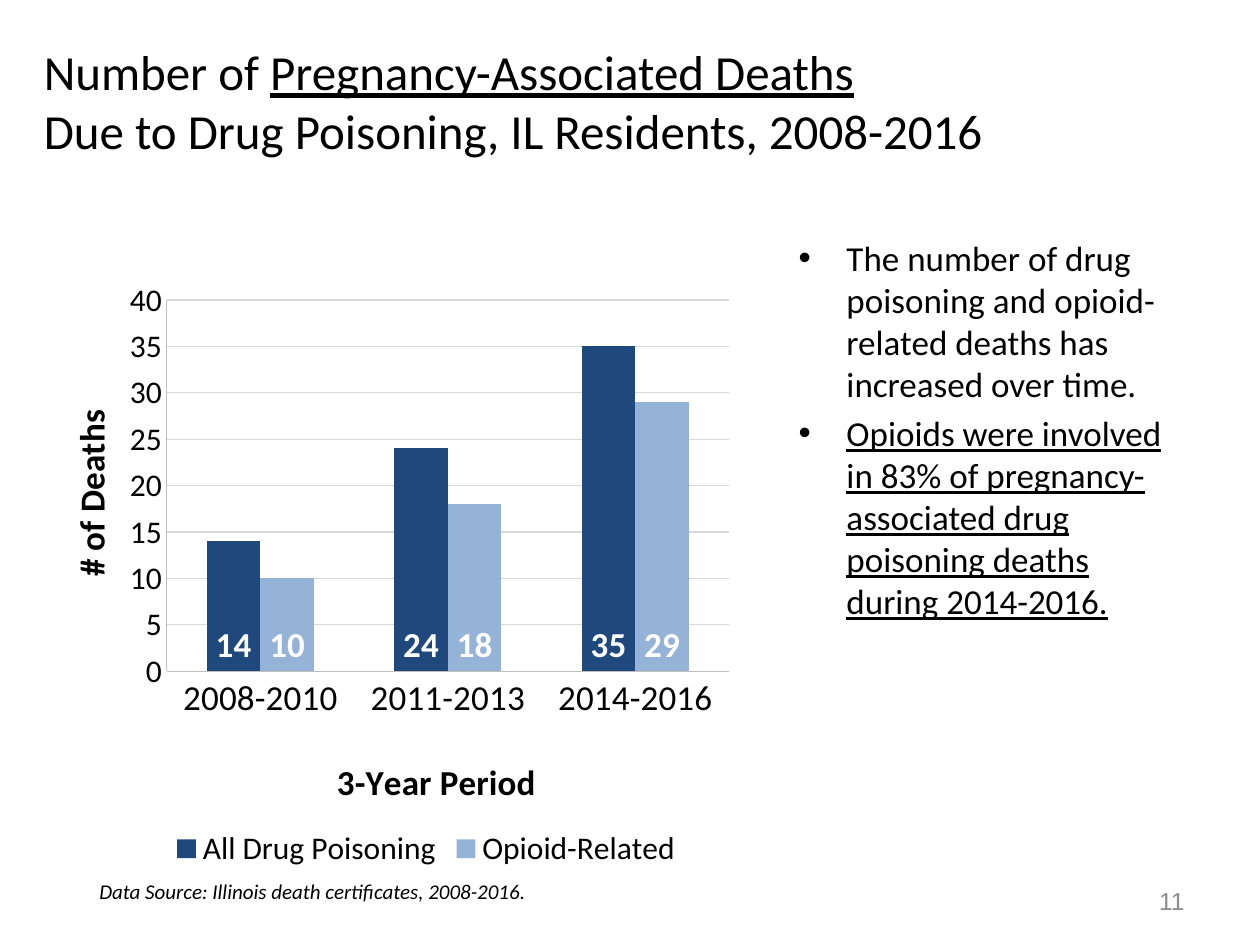
from lxml.etree import SubElement
from pptx import Presentation
from pptx.chart.data import CategoryChartData
from pptx.dml.color import RGBColor
from pptx.enum.chart import XL_CHART_TYPE, XL_LABEL_POSITION, XL_LEGEND_POSITION, XL_TICK_MARK
from pptx.enum.text import MSO_ANCHOR, PP_ALIGN
from pptx.oxml import parse_xml
from pptx.oxml.ns import nsdecls, qn
from pptx.util import Inches, Pt

THEME = dict(
    font="Calibri", number_font="Arial",
    text="000000", muted="8C8C8C", light="FFFFFF",
    axis="BFBFBF", grid="D9D9D9", series=("1F497D", "95B3D7"),
    title=28, body=20, tick=18, number=14, source=12, hairline=0.75,
)

prs = Presentation()
prs.slide_width, prs.slide_height = Inches(10), Inches(7.5)
COL, ROW = prs.slide_width / 40, prs.slide_height / 30
s = prs.slides.add_slide(prs.slide_layouts[6])


def add_text(cell, paras, size, font=THEME["font"], color=THEME["text"], italic=False,
             align=PP_ALIGN.LEFT, anchor=MSO_ANCHOR.TOP, bullet=False):
    """Fill a grid cell (col, row, cols, rows); each paragraph is a list of (text, underline)."""
    x, y, w, h = cell
    sp = s.shapes.add_textbox(round(x * COL), round(y * ROW), round(w * COL), round(h * ROW))
    tf = sp.text_frame
    tf.word_wrap, tf.vertical_anchor = True, anchor
    for i, runs in enumerate(paras):
        p = tf.paragraphs[0] if i == 0 else tf.add_paragraph()
        p.alignment = align
        if i:
            p.space_before = Pt(size * 0.2)
        if bullet:
            pPr = p._p.get_or_add_pPr()
            pPr.set("marL", str(Inches(0.38)))
            pPr.set("indent", str(-Inches(0.38)))
            SubElement(pPr, qn("a:buFont")).set("typeface", "Arial")
            SubElement(pPr, qn("a:buChar")).set("char", "•")
        for j, (text, underline) in enumerate(runs):
            if text == "\n":
                p.add_line_break()
                continue
            r = p.add_run()
            r.text = text
            f = r.font
            f.name, f.size, f.italic, f.underline = font, Pt(size), italic, underline
            f.color.rgb = RGBColor.from_string(color)


def set_layout(el, x, y, w=None, h=None):
    """Place a chart part at shares of the chart's size."""
    for old in el.findall(qn("c:layout")):
        el.remove(old)
    parts = [("xMode", "edge"), ("yMode", "edge"), ("x", x), ("y", y)]
    if w:
        parts = [("layoutTarget", "inner")] + parts + [("w", w), ("h", h)]
    inner = "".join(f'<c:{k} val="{v}"/>' for k, v in parts)
    layout = parse_xml(f'<c:layout {nsdecls("c")}><c:manualLayout>{inner}</c:manualLayout></c:layout>')
    before = [e for e in el if e.tag in (qn("c:tx"), qn("c:legendPos"))]
    el.insert(len(before), layout)


add_text((1, 0.68, 36, 5),
         [[("Number of ", False), ("Pregnancy-Associated Deaths", True), ("\n", False),
           ("Due to Drug Poisoning, IL Residents, 2008-2016", False)]],
         THEME["title"], anchor=MSO_ANCHOR.MIDDLE)
add_text((24.96, 7.32, 13.04, 20.6),
         [[("The number of drug poisoning and opioid-related deaths has increased over time.", False)],
          [("Opioids were involved in 83% of pregnancy-associated drug poisoning deaths "
            "during 2014-2016.", True)]],
         THEME["body"], bullet=True)
add_text((28.68, 27.8, 9.32, 1.6), [[("11", False)]], THEME["number"], font=THEME["number_font"],
         color=THEME["muted"], align=PP_ALIGN.RIGHT, anchor=MSO_ANCHOR.MIDDLE)

# Chart
data = CategoryChartData(number_format="0")
data.categories = ["2008-2010", "2011-2013", "2014-2016"]
data.add_series("All Drug Poisoning", (14, 24, 35))
data.add_series("Opioid-Related", (10, 18, 29))
chart = s.shapes.add_chart(XL_CHART_TYPE.COLUMN_CLUSTERED, round(COL), round(8.56 * ROW),
                           round(22.6 * COL), round(19.32 * ROW), data).chart
chart.has_title = False
chart.font.name, chart.font.size = THEME["font"], Pt(THEME["body"])
chart.font.color.rgb = RGBColor.from_string(THEME["text"])
set_layout(chart._chartSpace.chart.plotArea, 0.19, 0.05, 0.79, 0.61)

axes = [(chart.category_axis, "3-Year Period", THEME["body"], (0.42, 0.79)),
        (chart.value_axis, "# of Deaths", THEME["tick"], (0.04, 0.22))]
for axis, title, size, place in axes:
    axis.major_tick_mark = axis.minor_tick_mark = XL_TICK_MARK.NONE
    axis.tick_labels.font.size = Pt(size)
    axis.format.line.color.rgb = RGBColor.from_string(THEME["axis"])
    axis.format.line.width = Pt(THEME["hairline"])
    axis.axis_title.text_frame.text = title
    f = axis.axis_title.text_frame.paragraphs[0].runs[0].font
    f.name, f.size, f.bold = THEME["font"], Pt(THEME["body"]), True
    f.color.rgb = RGBColor.from_string(THEME["text"])
    set_layout(axis.axis_title._element, *place)

value_axis = chart.value_axis
value_axis.minimum_scale, value_axis.maximum_scale, value_axis.major_unit = 0, 40, 5
grid = value_axis.major_gridlines.format.line
grid.color.rgb, grid.width = RGBColor.from_string(THEME["grid"]), Pt(THEME["hairline"])

plot = chart.plots[0]
plot.gap_width, plot.overlap, plot.vary_by_categories = 150, 0, False
for series, color in zip(plot.series, THEME["series"]):
    series.format.fill.solid()
    series.format.fill.fore_color.rgb = RGBColor.from_string(color)
    labels = series.data_labels
    labels.show_value, labels.position = True, XL_LABEL_POSITION.INSIDE_BASE
    labels.font.size, labels.font.bold = Pt(THEME["body"]), True
    labels.font.color.rgb = RGBColor.from_string(THEME["light"])

chart.has_legend = True
chart.legend.position = XL_LEGEND_POSITION.BOTTOM
chart.legend.include_in_layout = False
chart.legend.font.size = Pt(THEME["tick"])
set_layout(chart.legend._element, 0.19, 0.91)

add_text((2.76, 27.68, 25.48, 1.76),
         [[("Data Source: Illinois death certificates, 2008-2016.", False)]],
         THEME["source"], italic=True)

prs.save("out.pptx")
